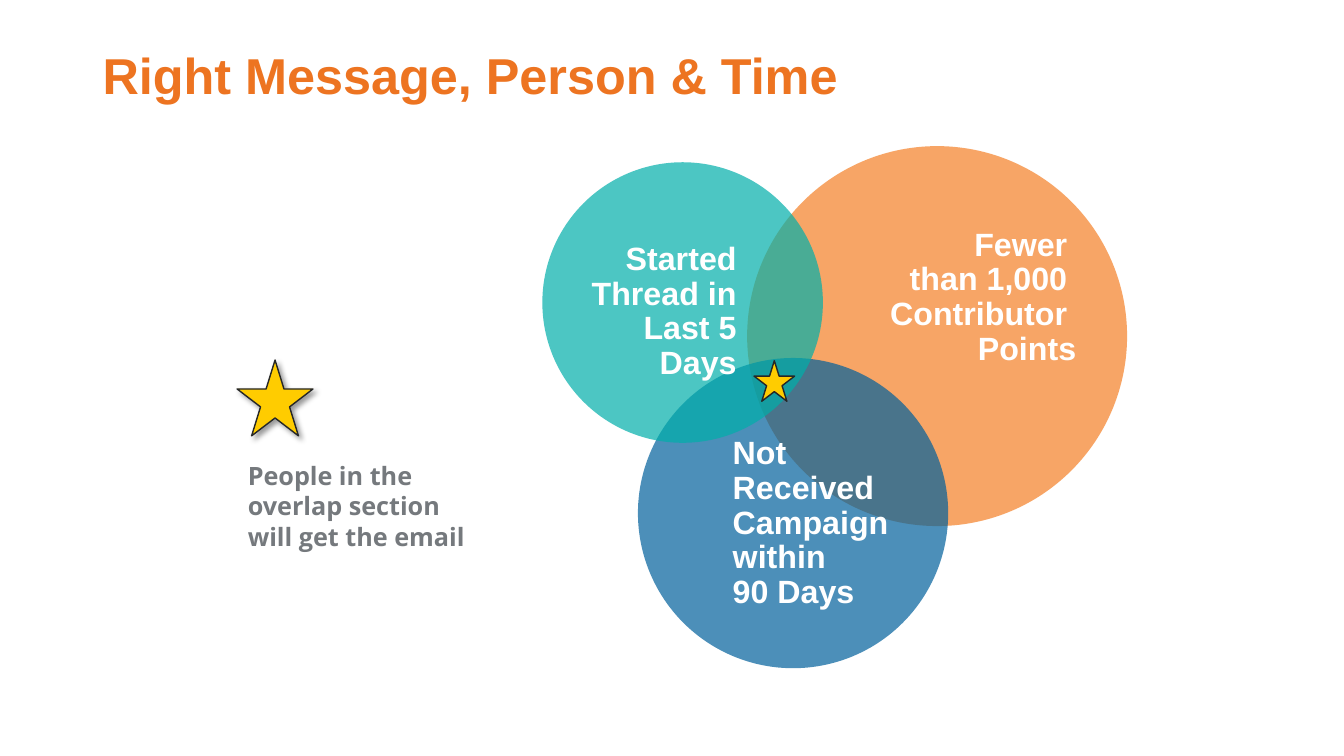
from lxml import etree
from pptx import Presentation
from pptx.dml.color import RGBColor
from pptx.enum.shapes import MSO_SHAPE
from pptx.enum.text import MSO_ANCHOR, PP_ALIGN
from pptx.oxml import parse_xml
from pptx.oxml.ns import nsdecls, qn
from pptx.util import Pt

OVAL, STAR = MSO_SHAPE.OVAL, MSO_SHAPE.STAR_5_POINT
LEFT, RIGHT = PP_ALIGN.LEFT, PP_ALIGN.RIGHT
TOP, MIDDLE = MSO_ANCHOR.TOP, MSO_ANCHOR.MIDDLE

ORANGE = RGBColor(0xF5, 0x80, 0x26)
BLUE = RGBColor(0x00, 0x60, 0x9C)
TEAL = RGBColor(0x00, 0xAF, 0xAA)
TITLE_ORANGE = RGBColor(0xED, 0x74, 0x21)
WHITE = RGBColor(0xFF, 0xFF, 0xFF)
GREY = RGBColor(0x75, 0x79, 0x7D)
GOLD = RGBColor(0xFF, 0xCC, 0x00)
INK = RGBColor(0x26, 0x27, 0x27)

TITLE = "Right Message, Person & Time"
TITLE_AREA = (66.2, 31, 828, 49.7)
CAPTION = "People in the\voverlap section \vwill get the email"
CAPTION_AREA = (169.9, 325.4, 197.3, 72.7)
CIRCLE_OPACITY = 70
AUDIENCES = [
    {"circle": (533.7, 104.4, 271.4), "color": ORANGE, "align": RIGHT,
     "label": "Fewer \vthan 1,000 \vContributor \vPoints",
     "area": (570.2, 151.9, 198.7, 121.7)},
    {"circle": (455.7, 255.7, 221.6), "color": BLUE, "align": LEFT,
     "label": "Not\vReceived Campaign within \v90 Days",
     "area": (523.4, 313.2, 133.2, 121.7)},
    {"circle": (387.4, 115.9, 200.4), "color": TEAL, "align": RIGHT,
     "label": "Started Thread in Last 5 Days",
     "area": (406.1, 167.8, 120.2, 110.2)},
]
OVERLAP_STAR = (538.6, 257.6, 29)
LEGEND_STAR = (169.4, 257.2, 54.2)


def add_text(page, area, text, size, color, font="Arial", align=LEFT,
             anchor=MIDDLE, spacing=0.9, margins=(7.2, 3.6)):
    box = page.shapes.add_textbox(*map(Pt, area))
    frame = box.text_frame
    frame.word_wrap = True
    frame.vertical_anchor = anchor
    frame.margin_left = frame.margin_right = Pt(margins[0])
    frame.margin_top = frame.margin_bottom = Pt(margins[1])
    frame.text = text
    para = frame.paragraphs[0]
    para.alignment = align
    para.line_spacing = spacing
    para.font.name = font
    para.font.size = Pt(size)
    para.font.bold = True
    para.font.color.rgb = color


def add_mark(page, kind, left, top, side, color):
    mark = page.shapes.add_shape(kind, Pt(left), Pt(top), Pt(side), Pt(side))
    mark.shadow.inherit = False
    mark.fill.solid()
    mark.fill.fore_color.rgb = color
    return mark


def add_circle(page, place, color):
    circle = add_mark(page, OVAL, *place, color)
    circle.line.fill.background()
    tint = circle.fill._xPr.find(qn("a:solidFill"))[0]
    etree.SubElement(tint, qn("a:alpha"), val=str(CIRCLE_OPACITY * 1000))


def add_star(page, place):
    star = add_mark(page, STAR, *place, GOLD)
    star.line.color.rgb = INK
    star.line.width = Pt(1)
    return star


def add_shadow(shape):
    effects = shape._element.spPr.find(qn("a:effectLst"))
    effects.append(parse_xml(
        f'<a:outerShdw {nsdecls("a")} blurRad="{Pt(4)}" dist="{Pt(3)}" '
        'dir="2700000" algn="tl" rotWithShape="0"><a:srgbClr val="000000">'
        '<a:alpha val="40000"/></a:srgbClr></a:outerShdw>'))


def main():
    deck = Presentation()
    deck.slide_width, deck.slide_height = Pt(960), Pt(540)
    page = deck.slides.add_slide(deck.slide_layouts[6])
    add_text(page, TITLE_AREA, TITLE, 36, TITLE_ORANGE)
    for audience in AUDIENCES:
        add_circle(page, audience["circle"], audience["color"])
        add_text(page, audience["area"], audience["label"], 23, WHITE,
                 align=audience["align"], margins=(0, 0))
    add_star(page, OVERLAP_STAR)
    add_shadow(add_star(page, LEGEND_STAR))
    add_text(page, CAPTION_AREA, CAPTION, 18, GREY, font="Open Sans",
             anchor=TOP, spacing=1.0)
    deck.save("out.pptx")


if __name__ == "__main__":
    main()
